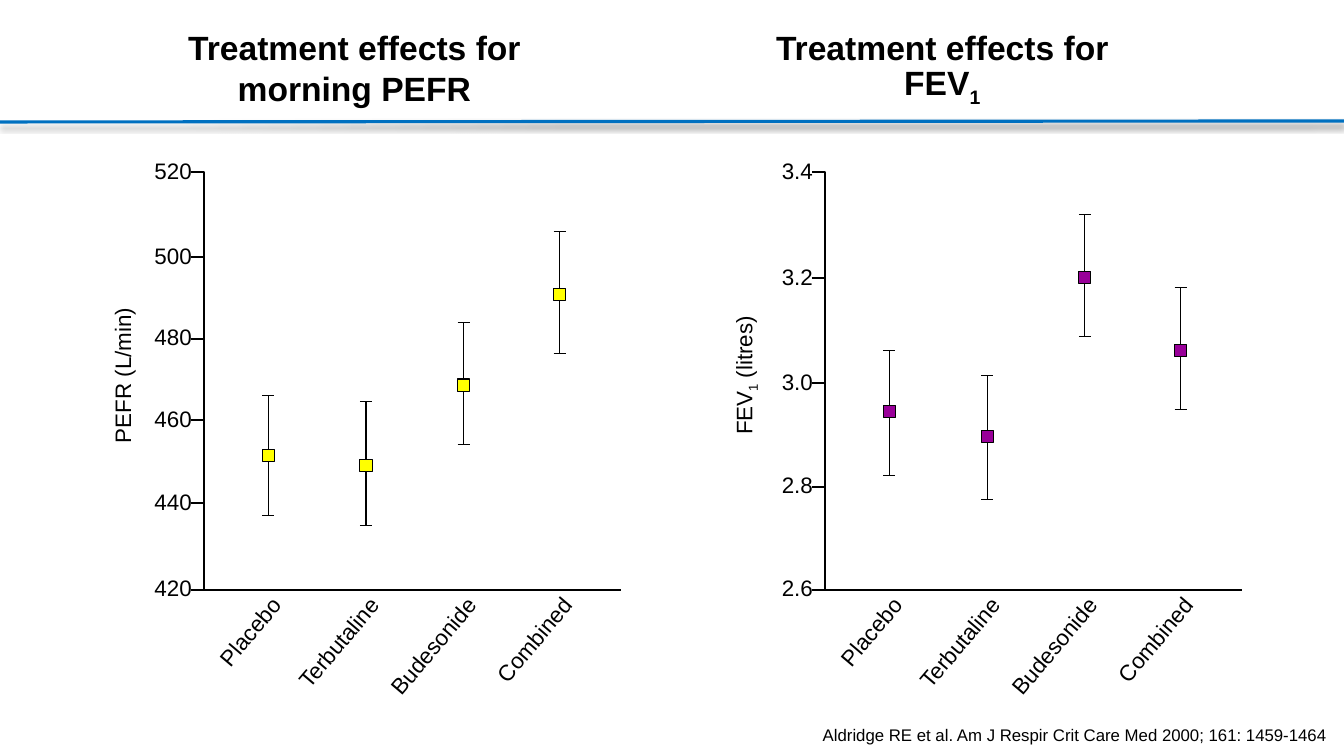
from lxml import etree
from pptx import Presentation
from pptx import util as u
from pptx.dml.color import RGBColor
from pptx.enum import shapes, text
from pptx.oxml import ns

PX = 9144
BLACK = RGBColor(0x00, 0x00, 0x00)
BLUE = RGBColor(0x00, 0x70, 0xC0)
YELLOW = RGBColor(0xFF, 0xFF, 0x00)
PURPLE = RGBColor(0x99, 0x00, 0x99)
CENTER, RIGHT = text.PP_ALIGN.CENTER, text.PP_ALIGN.RIGHT

deck = Presentation()
deck.slide_width, deck.slide_height = 1333 * PX, 750 * PX
page = deck.slides.add_slide(deck.slide_layouts[5])


def write(box, area, spans, size, align, bold=False, turn=0):
    box.left, box.top, box.width, box.height = [round(side * PX) for side in area]
    box.rotation = turn
    frame = box.text_frame
    frame.word_wrap = True
    frame.auto_size = text.MSO_AUTO_SIZE.SHAPE_TO_FIT_TEXT
    frame.vertical_anchor = text.MSO_ANCHOR.TOP
    para = frame.paragraphs[0]
    para.alignment = align
    for words, lowered in spans:
        span = para.add_run()
        span.text = words
        span.font.name = "Arial"
        span.font.size = u.Pt(size)
        span.font.bold = bold
        span.font.color.rgb = BLACK
        if lowered:
            span.font._element.set("baseline", "-25000")
    return para


def draw_line(x1, y1, x2, y2, weight, color=BLACK):
    line = page.shapes.add_connector(
        shapes.MSO_CONNECTOR.STRAIGHT, x1 * PX, y1 * PX, x2 * PX, y2 * PX)
    line.line.width = u.Pt(weight)
    line.line.color.rgb = color
    return etree.SubElement(line._element.spPr, ns.qn("a:effectLst"))


effects = draw_line(0, 121, 1333, 120, 2.25, BLUE)
shadow = etree.SubElement(effects, ns.qn("a:outerShdw"), blurRad=str(u.Pt(4)),
                          dist=str(u.Pt(3)), dir="5400000", rotWithShape="0")
shade = etree.SubElement(shadow, ns.qn("a:srgbClr"), val="000000")
etree.SubElement(shade, ns.qn("a:alpha"), val="40000")

TREATMENTS = [("Placebo", 64, 98, 622, 136), ("Terbutaline", 161, 98, 622, 136),
              ("Budesonide", 258, 105, 625, 144), ("Combined", 353, 105, 625, 144)]
AXIS_TOP, AXIS_BOTTOM = 171, 585

panels = [
    {"axis": 202, "color": YELLOW, "heading_left": 161,
     "heading": [("Treatment effects for morning PEFR", False)],
     "unit": [("PEFR (L/min)", False)],
     "ticks": [("520", 171), ("500", 255), ("480", 336),
               ("460", 417), ("440", 499), ("420", 585)],
     "ranges": [(392, 452, 511), (398, 462, 521), (320, 382, 441), (230, 292, 351)]},
    {"axis": 818, "color": PURPLE, "heading_left": 744,
     "heading": [("Treatment effects for FEV", False), ("1", True)],
     "unit": [("FEV", False), ("1", True), (" (litres)", False)],
     "ticks": [("3.4", 171), ("3.2", 276), ("3.0", 380), ("2.8", 483), ("2.6", 585)],
     "ranges": [(348, 408, 472), (373, 433, 496), (213, 275, 334), (285, 348, 406)]},
]

for number, panel in enumerate(panels):
    axis = panel["axis"]
    heading = page.shapes.add_textbox(0, 0, 0, 0) if number else page.shapes.title
    para = write(heading, (panel["heading_left"], 21, 381, 91), panel["heading"],
                 24, CENTER, bold=True)
    para.line_spacing = u.Pt(29.3)
    para.space_before = u.Pt(0)

    outline = page.shapes.build_freeform(axis, AXIS_BOTTOM, scale=PX)
    outline.add_line_segments([(axis, AXIS_TOP), (axis - 13, AXIS_TOP)], close=False)
    axis_shape = outline.convert_to_shape()
    axis_shape.shadow.inherit = False
    axis_shape.fill.background()
    axis_shape.line.color.rgb = BLACK
    axis_shape.line.width = u.Pt(1.5)
    draw_line(axis - 13, AXIS_BOTTOM, axis + 414, AXIS_BOTTOM, 1.5)

    for label, y in panel["ticks"]:
        if AXIS_TOP < y < AXIS_BOTTOM:
            draw_line(axis - 13, y, axis, y, 1.5)
        write(page.shapes.add_textbox(0, 0, 0, 0), (axis - 76, y - 20, 74, 37),
              [(label, False)], 16, RIGHT)
    write(page.shapes.add_textbox(0, 0, 0, 0), (axis - 166, 354, 171, 37),
          panel["unit"], 16, CENTER, turn=270)

    for treatment, (high, middle, low) in zip(TREATMENTS, panel["ranges"]):
        name, offset, reach, top, width = treatment
        x = axis + offset
        write(page.shapes.add_textbox(0, 0, 0, 0), (x - reach, top, width, 37),
              [(name, False)], 16, RIGHT, turn=310.3)
        draw_line(x, high, x, low, 0.75)
        for y in (high, low):
            draw_line(x - 6, y, x + 6, y, 0.75)
        marker = page.shapes.add_shape(
            shapes.MSO_SHAPE.RECTANGLE, (x - 6) * PX, (middle - 6) * PX, 12 * PX, 12 * PX)
        marker.shadow.inherit = False
        marker.fill.solid()
        marker.fill.fore_color.rgb = panel["color"]
        marker.line.color.rgb = BLACK
        marker.line.width = u.Pt(0.75)

write(page.shapes.add_textbox(0, 0, 0, 0), (404, 714, 922, 30),
      [("Aldridge RE et al. Am J Respir Crit Care Med 2000; 161: 1459-1464", False)],
      12, RIGHT)

deck.save("out.pptx")
